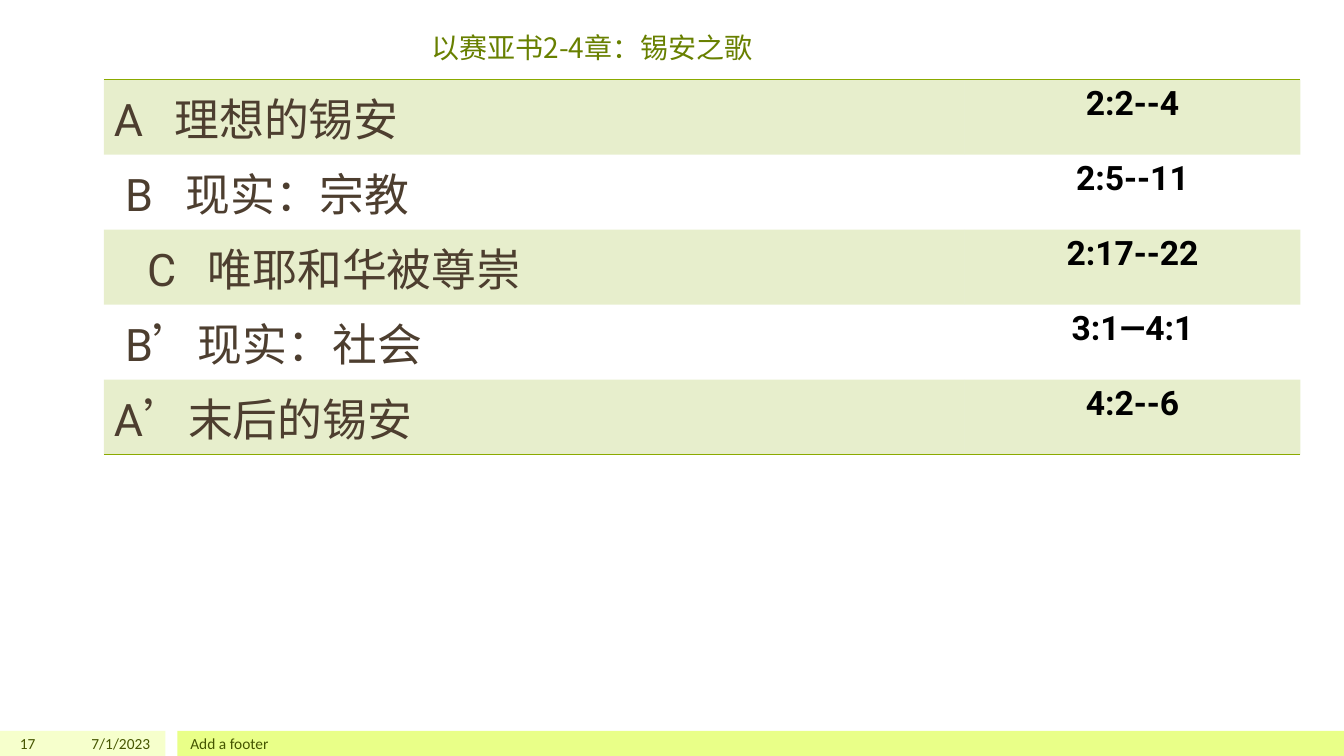
from lxml import etree
from pptx import Presentation, util as u
from pptx.dml import color
from pptx.enum import shapes, text
from pptx.oxml import ns

INK = {"title": "688000", "foot": "455500", "label": "4D3E2F", "verse": "000000",
       "pale": "F6FFCC", "lime": "E9FF88", "band": "8BAA00"}
HAN = "Noto Sans CJK SC"
PLAIN = "{2D5ABB26-0587-4C30-8999-92F81FD0307C}"
LEFT, MID, RIGHT = text.PP_ALIGN.LEFT, text.PP_ALIGN.CENTER, text.PP_ALIGN.RIGHT
TOP, CORE, BASE = (text.MSO_ANCHOR.TOP, text.MSO_ANCHOR.MIDDLE,
                   text.MSO_ANCHOR.BOTTOM)


class Deck:
    """Places elements on a grid of 160 columns by 90 rows."""

    def __init__(self):
        self.prs = Presentation()
        self.prs.slide_width = u.Inches(13.33)
        self.prs.slide_height = u.Inches(7.5)
        self.slide = self.prs.slides.add_slide(self.prs.slide_layouts[6])

    def col(self, n):
        return round(self.prs.slide_width * n / 160)

    def row(self, n):
        return round(self.prs.slide_height * n / 90)

    def area(self, x, y, w, h):
        return self.col(x), self.row(y), self.col(w), self.row(h)

    def run(self, par, words, size, ink, font, bold=False):
        run = par.add_run()
        run.text = words
        run.font.size = u.Pt(size)
        run.font.bold = bold
        run.font.name = font
        run.font.color.rgb = color.RGBColor.from_string(INK[ink])
        east = etree.SubElement(run.font._element, ns.qn("a:ea"))
        east.set("typeface", HAN)

    def bar(self, x, y, w, h, ink):
        bar = self.slide.shapes.add_shape(
            shapes.MSO_SHAPE.RECTANGLE, *self.area(x, y, w, h))
        bar.shadow.inherit = False
        bar.fill.solid()
        bar.fill.fore_color.rgb = color.RGBColor.from_string(INK[ink])
        bar.line.fill.background()

    def note(self, box, words, size, ink, font, align, anchor, foot=0.05):
        frame = self.slide.shapes.add_textbox(*self.area(*box)).text_frame
        frame.word_wrap = True
        frame.vertical_anchor = anchor
        frame.margin_bottom = u.Inches(foot)
        par = frame.paragraphs[0]
        par.alignment = align
        self.run(par, words, size, ink, font)

    def table(self, x, y, cols, high, count):
        shape = self.slide.shapes.add_table(
            count, len(cols), *self.area(x, y, sum(cols), high * count))
        table = shape.table
        table.first_row = table.horz_banding = False
        table._tbl.tblPr.find(ns.qn("a:tableStyleId")).text = PLAIN
        for col, wide in zip(table.columns, cols):
            col.width = self.col(wide)
        for row in table.rows:
            row.height = self.row(high)
        return table

    def edge(self, cell, side):
        props = cell._tc.get_or_add_tcPr()
        line = etree.Element(ns.qn("a:" + side), w=str(u.Pt(1)))
        fill = etree.SubElement(line, ns.qn("a:solidFill"))
        etree.SubElement(fill, ns.qn("a:srgbClr"), val=INK["band"])
        props.insert(0, line)

    def tint(self, cell, share):
        cell.fill.solid()
        cell.fill.fore_color.rgb = color.RGBColor.from_string(INK["band"])
        tone = cell._tc.tcPr.find(".//" + ns.qn("a:srgbClr"))
        etree.SubElement(tone, ns.qn("a:alpha"), val=str(share * 1000))

    def indent(self, par, start, hang):
        props = par._p.get_or_add_pPr()
        props.set("marL", str(u.Inches(start + hang)))
        props.set("indent", str(-u.Inches(hang)))


def main():
    deck = Deck()

    # Footer bars
    deck.bar(0, 87, 19.68, 3, "pale")
    deck.bar(21.12, 87, 138.88, 3, "lime")

    # Title
    deck.note((8.64, 0.96, 123.72, 6.96), "以赛亚书2-4章：锡安之歌",
              20, "title", HAN, MID, BASE, 0.02)

    # Footer texts
    for x, wide, words, align in ((0, 5.4, "17", RIGHT),
                                  (6, 13.08, "7/1/2023", RIGHT),
                                  (21.48, 120, "Add a footer", LEFT)):
        deck.note((x, 87, wide, 3), words, 11, "foot", "Calibri", align, CORE)

    # Chiasm: indent, letter, mark or tab, theme, verses
    lines = [(0, "A", "\t", "理想的锡安", "2:2--4"),
             (0.11, "B", "\t", "现实：宗教", "2:5--11"),
             (0.33, "C", "\t", "唯耶和华被尊崇", "2:17--22"),
             (0.11, "B", "’", "现实：社会", "3:1—4:1"),
             (0, "A", "’", "末后的锡安", "4:2--6")]
    table = deck.table(12.36, 9.48, (102.48, 39.96), 8.93, len(lines))
    for i, (start, mark, gap, theme, verse) in enumerate(lines):
        left, right = table.cell(i, 0), table.cell(i, 1)
        par = left.text_frame.paragraphs[0]
        deck.indent(par, start, 0.6)
        deck.run(par, mark, 32, "label", "Roboto")
        deck.run(par, gap, 32, "label", HAN)
        deck.run(par, theme, 32, "label", "Roboto")
        par = right.text_frame.paragraphs[0]
        par.alignment = MID
        deck.run(par, verse, 24, "verse", "Roboto", True)
        for cell in (left, right):
            cell.vertical_anchor = TOP
            if i % 2:
                cell.fill.background()
            else:
                deck.tint(cell, 20)
            if i == 0:
                deck.edge(cell, "lnT")
            if i == len(lines) - 1:
                deck.edge(cell, "lnB")

    deck.prs.save("out.pptx")


if __name__ == "__main__":
    main()
